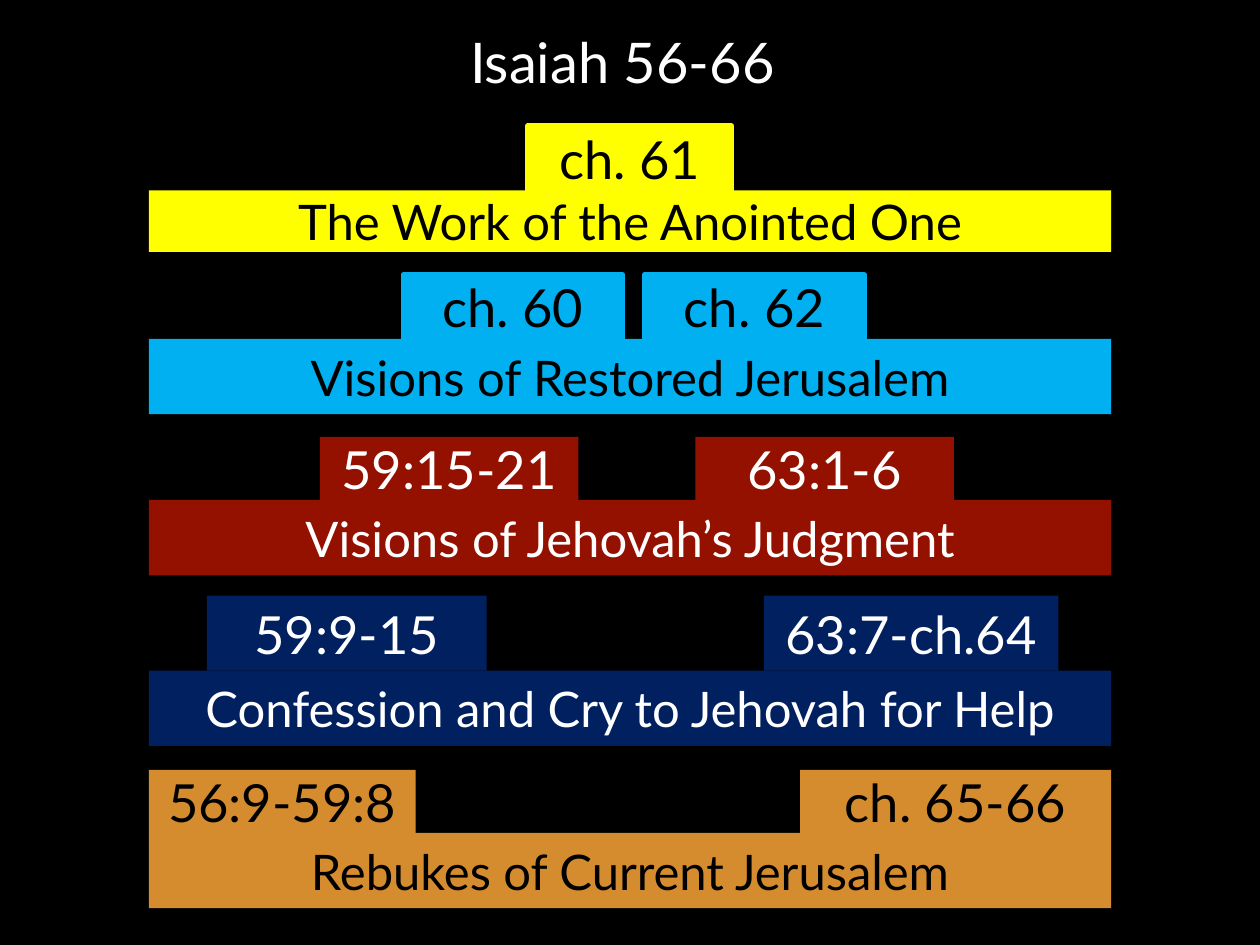
from dataclasses import dataclass

from pptx import Presentation
from pptx.dml.color import RGBColor
from pptx.enum.shapes import MSO_SHAPE
from pptx.enum.text import MSO_ANCHOR, PP_ALIGN
from pptx.util import Cm, Pt

RECTANGLE = MSO_SHAPE.RECTANGLE
MIDDLE = MSO_ANCHOR.MIDDLE
CENTER = PP_ALIGN.CENTER

FONT = "Lato"
BLACK, WHITE = "000000", "FFFFFF"
BAR_LEFT, BAR_WIDTH = 3.0, 19.4


@dataclass
class Tier:
    label: str
    fill: str
    text_color: str
    tab_top: float
    bar_top: float
    tabs: list  # (passage, left, width)
    bar_height: float = 1.52
    outlined: bool = False


TIERS = [
    Tier("The Work of the Anointed One", "FFFF00", BLACK, 2.54, 3.84,
         [("ch. 61", 10.64, 4.11)], bar_height=1.24, outlined=True),
    Tier("Visions of Restored Jerusalem", "00B0F0", BLACK, 5.54, 6.83,
         [("ch. 60", 8.13, 4.42), ("ch. 62", 13.0, 4.42)], outlined=True),
    Tier("Visions of Jehovah’s Judgment", "941100", WHITE, 8.81, 10.08,
         [("59:15-21", 6.45, 5.21), ("63:1-6", 14.02, 5.21)]),
    Tier("Confession and Cry to Jehovah for Help", "002060", WHITE, 12.01, 13.52,
         [("59:9-15", 4.17, 5.64), ("63:7-ch.64", 15.4, 5.94)]),
    Tier("Rebukes of Current Jerusalem", "D58C2E", BLACK, 15.52, 16.79,
         [("56:9-59:8", 3.0, 5.38), ("ch. 65-66", 16.13, 6.27)]),
]


def rgb(color):
    return RGBColor.from_string(color)


def write_text(shape, text, size, color):
    frame = shape.text_frame
    frame.word_wrap = True
    frame.vertical_anchor = MIDDLE
    para = frame.paragraphs[0]
    para.text = text
    para.alignment = CENTER
    para.font.name = FONT
    para.font.size = Pt(size)
    para.font.color.rgb = rgb(color)
    return para


def add_title(slide, text):
    box = slide.shapes.add_textbox(Cm(1.6), Cm(0.28), Cm(21.9), Cm(2.06))
    write_text(box, text, 32, WHITE).line_spacing = 0.9


def add_block(slide, text, left, top, width, height, fill, color, size, outlined=False):
    block = slide.shapes.add_shape(RECTANGLE, Cm(left), Cm(top), Cm(width), Cm(height))
    block.shadow.inherit = False
    block.fill.solid()
    block.fill.fore_color.rgb = rgb(fill)
    if outlined:
        block.line.color.rgb = rgb(fill)
        block.line.width = Pt(3)
    else:
        block.line.fill.background()
    write_text(block, text, size, color)


def add_tier(slide, tier):
    # Passage tabs stand on the bar
    tab_height = tier.bar_top - tier.tab_top
    for passage, left, width in tier.tabs:
        add_block(slide, passage, left, tier.tab_top, width, tab_height,
                  tier.fill, tier.text_color, 30, tier.outlined)
    # Theme bar
    add_block(slide, tier.label, BAR_LEFT, tier.bar_top, BAR_WIDTH, tier.bar_height,
              tier.fill, tier.text_color, 28)


def main():
    deck = Presentation()
    deck.slide_width, deck.slide_height = Cm(25.4), Cm(19.05)
    slide = deck.slides.add_slide(deck.slide_layouts[6])
    slide.background.fill.solid()
    slide.background.fill.fore_color.rgb = rgb(BLACK)

    for tier in TIERS:
        add_tier(slide, tier)
    add_title(slide, "Isaiah 56-66")

    deck.save("out.pptx")


if __name__ == "__main__":
    main()
